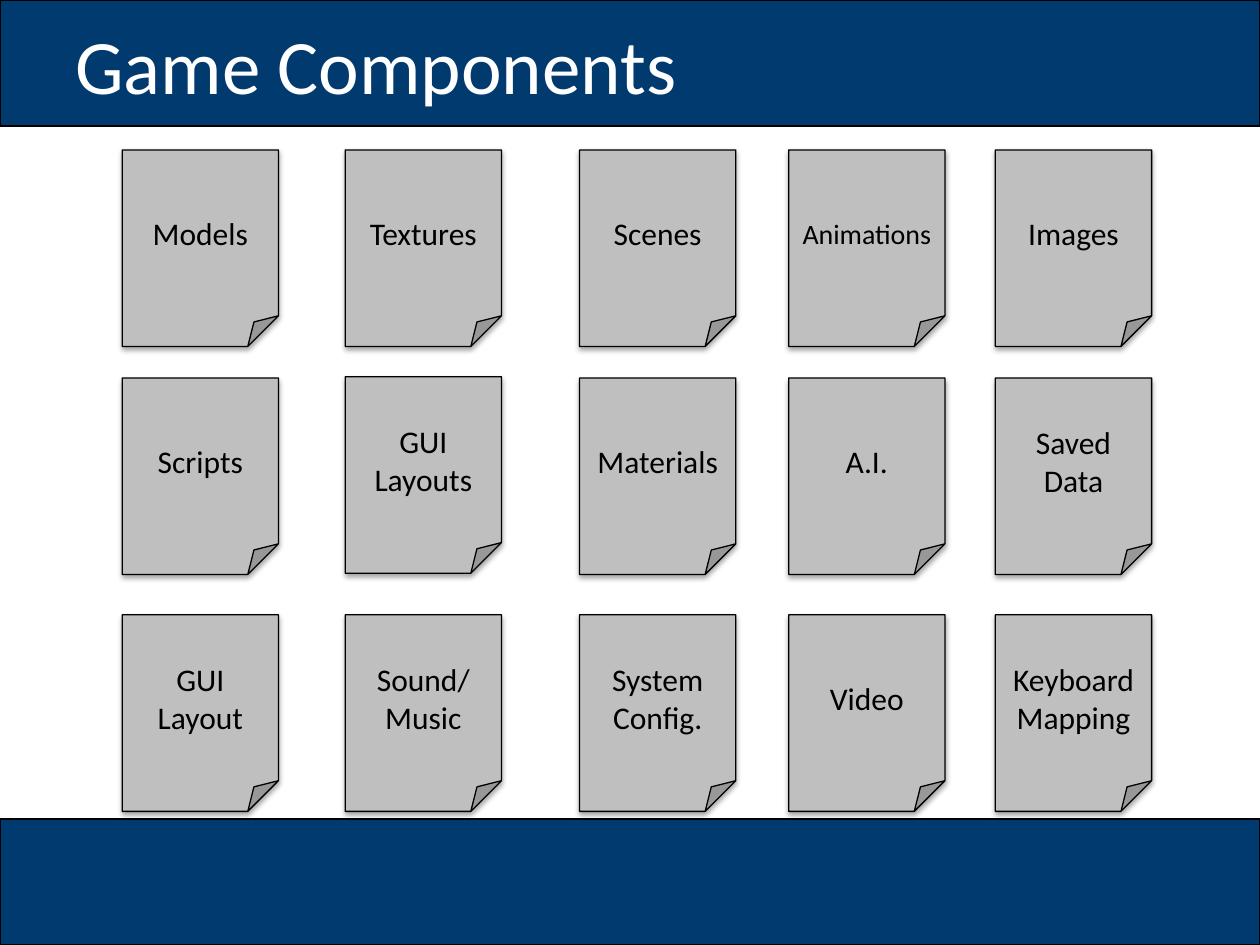
from lxml import etree
from pptx import Presentation
from pptx.dml.color import RGBColor
from pptx.enum import shapes, text
from pptx.oxml import ns
from pptx.util import Inches, Pt

COLORS = {"navy": "003A6E", "page": "BFBFBF", "black": "000000", "white": "FFFFFF"}
LEFTS = [0.97, 2.74, 4.6, 6.26, 7.9]
TOPS = [1.19, 3, 4.88]
PAGES = [
    ["Models", "Textures", "Scenes", "Animations", "Images"],
    ["Scripts", "GUI Layouts", "Materials", "A.I.", "Saved\nData"],
    ["GUI\nLayout", "Sound/\nMusic", "System\nConfig.", "Video", "Keyboard\nMapping"],
]


def add_box(kind, left, top, width, height, fill):
    sp = s.shapes.add_shape(kind, Inches(left), Inches(top), Inches(width), Inches(height))
    sp.fill.solid()
    sp.fill.fore_color.rgb = RGBColor.from_string(COLORS[fill])
    sp.line.color.rgb = RGBColor.from_string(COLORS["black"])
    sp.line.width = Pt(0.75)
    sp.shadow.inherit = False
    return sp


def set_text(sp, words, size, color, align):
    tf = sp.text_frame
    tf.word_wrap = True
    tf.vertical_anchor = text.MSO_ANCHOR.MIDDLE
    tf.text = words
    for p in tf.paragraphs:
        p.alignment = align
        for r in p.runs:
            r.font.name = "Calibri"
            r.font.size = Pt(size)
            r.font.color.rgb = RGBColor.from_string(COLORS[color])


prs = Presentation()
prs.slide_width, prs.slide_height = Inches(10), Inches(7.5)
s = prs.slides.add_slide(prs.slide_layouts[6])

for top in (6.5, 0):
    add_box(shapes.MSO_SHAPE.RECTANGLE, 0, top, 10, 1, "navy")

title = s.shapes.add_textbox(Inches(0.5), Inches(0.01), Inches(9), Inches(1))
set_text(title, "Game Components", 44, "white", text.PP_ALIGN.LEFT)

for top, row in zip(TOPS, PAGES):
    for left, label in zip(LEFTS, row):
        page_top = 2.99 if label == "GUI Layouts" else top
        page = add_box(shapes.MSO_SHAPE.FOLDED_CORNER, left, page_top, 1.24, 1.56, "page")
        spPr = page._element.spPr
        guides = spPr.find(ns.qn("a:prstGeom")).get_or_add_avLst()
        etree.SubElement(guides, ns.qn("a:gd"), name="adj", fmla="val 19600")
        effects = spPr.find(ns.qn("a:effectLst"))
        shadow = etree.SubElement(effects, ns.qn("a:outerShdw"), blurRad=str(Pt(3.1)),
                                  dist=str(Pt(1.8)), dir="5400000", rotWithShape="0")
        color = etree.SubElement(shadow, ns.qn("a:srgbClr"), val=COLORS["black"])
        etree.SubElement(color, ns.qn("a:alpha"), val="35000")
        size = 16 if label == "Animations" else 18
        set_text(page, label, size, "black", text.PP_ALIGN.CENTER)

prs.save("out.pptx")
